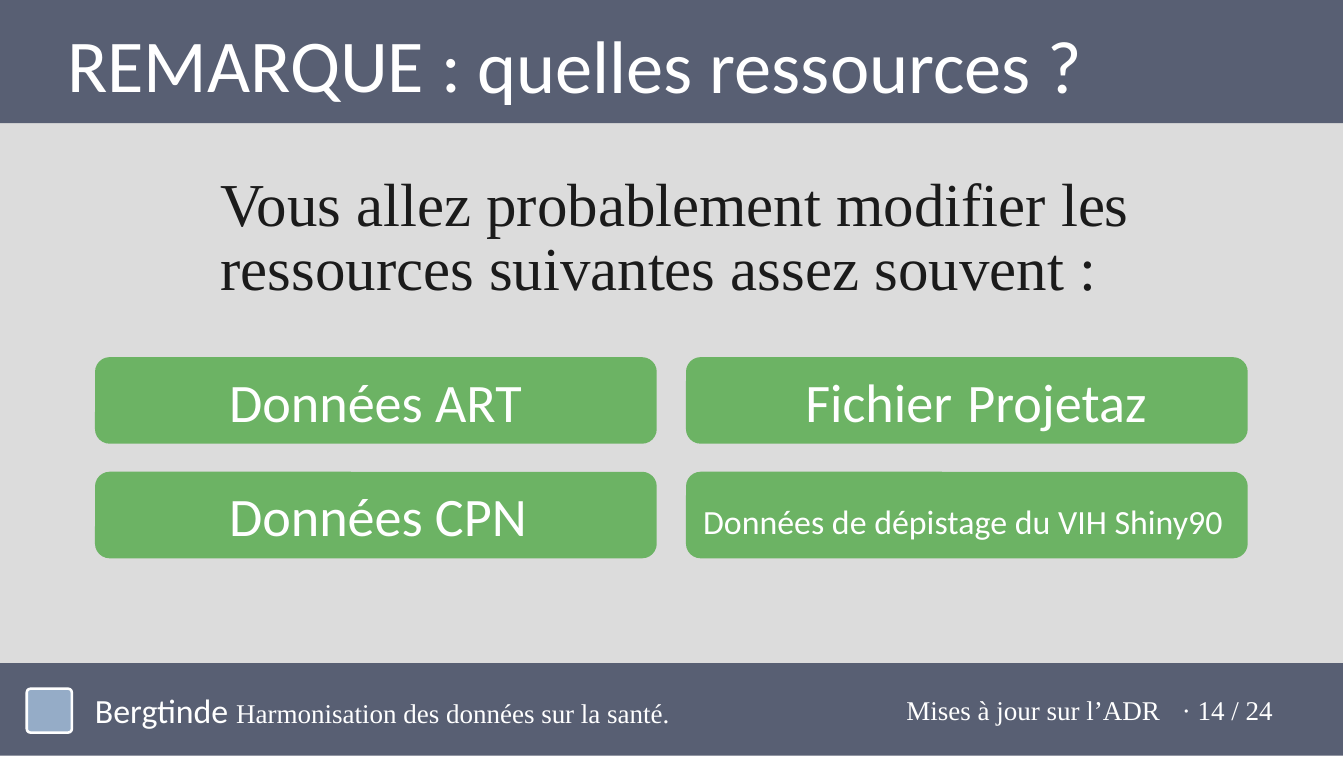
from dataclasses import dataclass

from pptx import Presentation
from pptx.dml.color import RGBColor
from pptx.enum.shapes import MSO_SHAPE as Preset
from pptx.enum.text import MSO_ANCHOR as Anchor, PP_ALIGN as Align
from pptx.util import Inches, Pt

COLORS = {
    "slate": "585F73",
    "gray": "DCDCDC",
    "green": "6CB364",
    "sky": "95ACC7",
    "white": "FFFFFF",
    "ink": "1B1B1B",
}
SANS = "Calibri"
SERIF = "Times New Roman"
PAGE_WIDTH, PAGE_HEIGHT = 11.03, 6.21
BAND_WIDTH = 11.02
CARD_WIDTH, CARD_HEIGHT, CARD_RADIUS = 4.61, 0.71, 0.12
CARD_LEFT, CARD_TOP = 0.78, 2.93
CARD_STEP_X, CARD_STEP_Y = 4.85, 0.94


@dataclass(frozen=True)
class Block:
    left: float
    top: float
    width: float
    height: float
    color: str
    radius: float = 0
    border: str = ""


@dataclass(frozen=True)
class Span:
    text: str
    size: float
    font: str = SANS
    color: str = "white"


@dataclass(frozen=True)
class Label:
    left: float
    top: float
    width: float
    height: float
    leading: float
    spans: tuple[Span, ...]
    inset: float = 0.02


BANDS = [
    Block(0, 1.01, BAND_WIDTH, 4.43, "gray"),
    Block(0, 0, BAND_WIDTH, 1.01, "slate"),
    Block(0, 5.44, BAND_WIDTH, 0.76, "slate"),
]
EMBLEM = Block(0.22, 5.65, 0.37, 0.36, "sky", 0.03, "white")
CARDS = [
    Block(CARD_LEFT + column * CARD_STEP_X, CARD_TOP + row * CARD_STEP_Y,
          CARD_WIDTH, CARD_HEIGHT, "green", CARD_RADIUS)
    for column in range(2)
    for row in range(2)
]

HEADINGS = [
    Label(0.54, 0.21, 3.55, 0.64, 46, (Span("REMARQUE :", 44),), 0.03),
    Label(3.91, 0.22, 6.33, 0.64, 46, (Span("quelles ressources ?", 44),), 0.03),
    Label(1.8, 1.41, 7.67, 0.53, 37.5,
          (Span("Vous allez probablement modifier les ressources "
                "suivantes assez souvent :", 36, SERIF, "ink"),), 0.03),
]
CARD_LABELS = [
    Label(left, top, width, 0.47, 34, (Span(text, size),))
    for left, top, width, text, size in [
        (1.87, 3.06, 2.69, "Données ART", 32),
        (6.6, 3.06, 1.9, "Fichier", 32),
        (7.93, 3.06, 2, "Projetaz", 32),
        (1.87, 4, 2.56, "Données CPN", 32),
        (5.76, 3.95, 4.41, "Données de dépistage du VIH Shiny90", 20),
    ]
]
FOOTER = [
    Label(0.77, 5.67, 4.86, 0.31, 21.8,
          (Span("Bergtinde ", 20),
           Span("Harmonisation des données sur la santé.", 16, SERIF))),
    Label(7.43, 5.71, 2.2, 0.26, 17.2,
          (Span("Mises à jour sur l’ADR", 16, SERIF),), 0.01),
    Label(9.69, 5.71, 0.83, 0.26, 17.2,
          (Span("· 14 / 24", 16, SERIF),), 0.01),
]


def rgb(name: str) -> RGBColor:
    return RGBColor.from_string(COLORS[name])


def draw_block(page, block: Block) -> None:
    preset = Preset.ROUNDED_RECTANGLE if block.radius else Preset.RECTANGLE
    shape = page.shapes.add_shape(
        preset, Inches(block.left), Inches(block.top),
        Inches(block.width), Inches(block.height))
    shape.shadow.inherit = False
    shape.fill.solid()
    shape.fill.fore_color.rgb = rgb(block.color)
    if block.radius:
        shape.adjustments[0] = block.radius / min(block.width, block.height)
    if block.border:
        shape.line.color.rgb = rgb(block.border)
        shape.line.width = Pt(1.5)
    else:
        shape.line.fill.background()


def draw_label(page, label: Label) -> None:
    box = page.shapes.add_textbox(
        Inches(label.left), Inches(label.top),
        Inches(label.width), Inches(label.height))
    frame = box.text_frame
    frame.word_wrap = True
    frame.vertical_anchor = Anchor.TOP
    frame.margin_left = Inches(0.01)
    frame.margin_top = Inches(label.inset)
    frame.margin_right = frame.margin_bottom = Inches(0)
    para = frame.paragraphs[0]
    para.alignment = Align.LEFT
    para.line_spacing = Pt(label.leading)
    for span in label.spans:
        run = para.add_run()
        run.text = span.text
        run.font.size = Pt(span.size)
        run.font.name = span.font
        run.font.color.rgb = rgb(span.color)


def main() -> None:
    deck = Presentation()
    deck.slide_width = Inches(PAGE_WIDTH)
    deck.slide_height = Inches(PAGE_HEIGHT)
    page = deck.slides.add_slide(deck.slide_layouts[6])
    for block in [*BANDS, EMBLEM, *CARDS]:
        draw_block(page, block)
    for label in [*HEADINGS, *CARD_LABELS, *FOOTER]:
        draw_label(page, label)
    deck.save("out.pptx")


if __name__ == "__main__":
    main()
